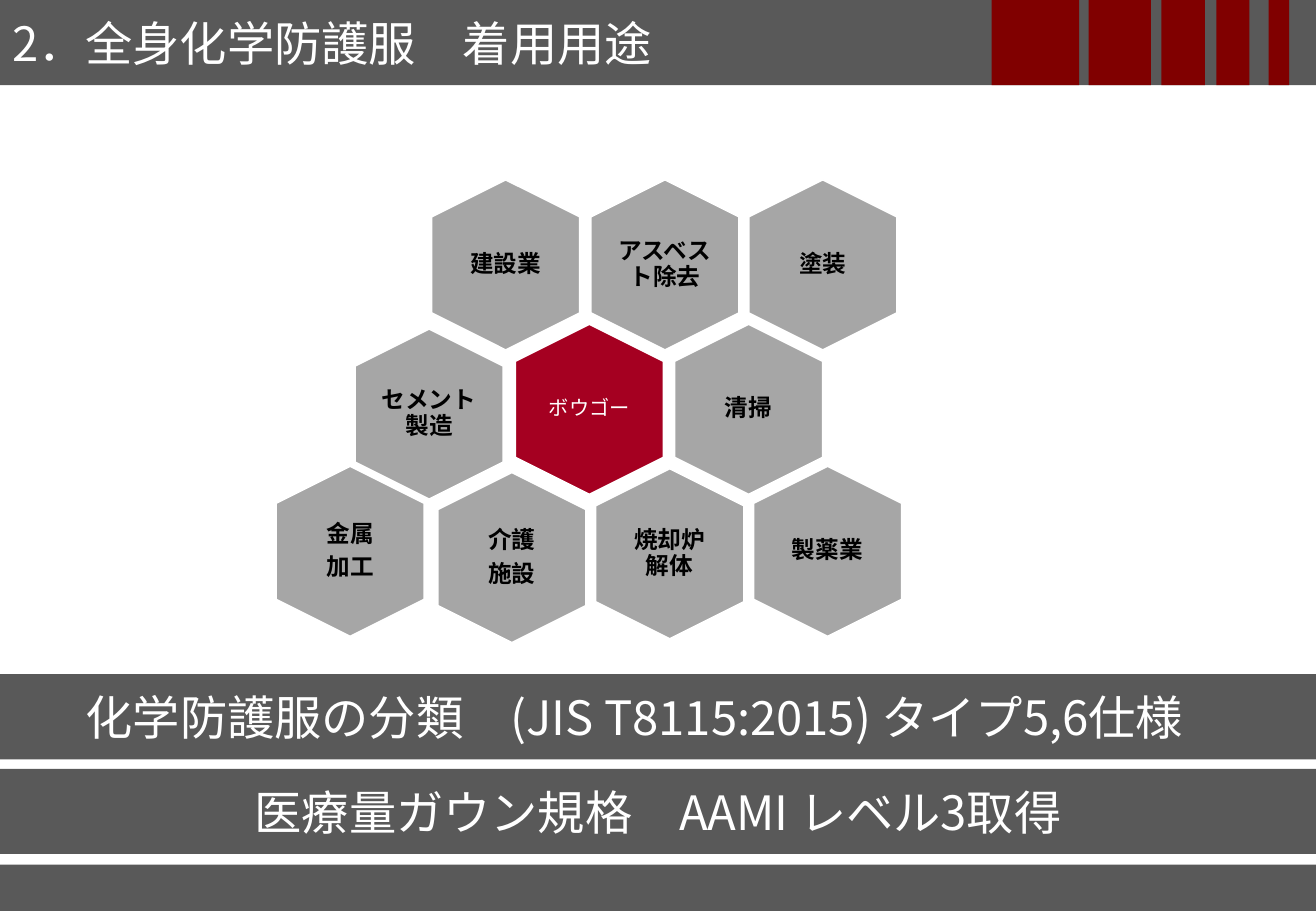
"""Build the slide on the uses of full-body chemical protective clothing."""
from dataclasses import dataclass

from lxml import etree
from pptx import Presentation
from pptx.dml.color import RGBColor
from pptx.enum.shapes import MSO_SHAPE
from pptx.enum.text import MSO_ANCHOR, MSO_AUTO_SIZE, PP_ALIGN
from pptx.oxml.ns import qn
from pptx.util import Cm, Pt

RECTANGLE, HEXAGON = MSO_SHAPE.RECTANGLE, MSO_SHAPE.HEXAGON
LEFT, CENTER = PP_ALIGN.LEFT, PP_ALIGN.CENTER
MIDDLE = MSO_ANCHOR.MIDDLE
NO_AUTOFIT = MSO_AUTO_SIZE.NONE
TITLE_ONLY = 5


@dataclass(frozen=True)
class Theme:
    bar: RGBColor = RGBColor(0x59, 0x59, 0x59)
    stripe: RGBColor = RGBColor(0x80, 0x00, 0x00)
    use: RGBColor = RGBColor(0xA6, 0xA6, 0xA6)
    product: RGBColor = RGBColor(0xA5, 0x00, 0x21)
    light: RGBColor = RGBColor(0xFF, 0xFF, 0xFF)
    dark: RGBColor = RGBColor(0x00, 0x00, 0x00)
    heading_font: str = "Noto Sans CJK JP"
    label_font: str = "Calibri"
    asian_font: str = "Noto Sans CJK JP"
    heading_size: Pt = Pt(28)
    use_size: Pt = Pt(14)
    product_size: Pt = Pt(12)


THEME = Theme()
SLIDE_WIDTH, SLIDE_HEIGHT = 27.51, 19.05
BAR_HEIGHT = 1.78
FOOTER_TOP = 18.08
HEX_LENGTH, HEX_WIDTH = 3.56, 3.10
LABEL_WIDTH, LABEL_HEIGHT = 2.13, 2.44

TITLE = "2．全身化学防護服　着用用途"
STANDARDS = [
    (14.1, "化学防護服の分類　(JIS T8115:2015) タイプ5,6仕様　"),
    (16.08, "医療量ガウン規格　AAMI レベル3取得"),
]
STRIPES = [(20.73, 1.83), (22.76, 1.3), (24.28, 0.91), (25.43, 0.69), (26.52, 0.43)]
PRODUCT = "ボウゴー"
CELLS = [
    (8.79, 3.99, 0, "建設業"),
    (12.12, 3.99, 0, "アスベスト除去"),
    (15.42, 3.99, 0.15, "塗装"),
    (7.19, 7.11, 0, "セメント製造"),
    (10.54, 7.01, 0.13, PRODUCT),
    (13.87, 7.01, 0, "清掃"),
    (5.54, 9.98, 0.15, "金属\n加工"),
    (8.92, 10.11, 0.15, "介護\n施設"),
    (12.22, 10.03, 0.15, "焼却炉\u200b解体".replace("\u200b", "")),
    (15.52, 9.98, 0, "製薬業"),
]


def write(frame, text, font_name, size, color, align=CENTER, bold=False):
    frame.text = text
    frame.word_wrap = True
    frame.auto_size = NO_AUTOFIT
    frame.vertical_anchor = MIDDLE
    for paragraph in frame.paragraphs:
        paragraph.alignment = align
        font = paragraph.font
        font.size, font.bold, font.name = size, bold, font_name
        font.color.rgb = color
        defaults = paragraph._p.xpath("a:pPr/a:defRPr")[0]
        etree.SubElement(defaults, qn("a:ea"), typeface=THEME.asian_font)


def add_filled(shapes, preset, left, top, width, height, fill):
    shape = shapes.add_shape(preset, Cm(left), Cm(top), Cm(width), Cm(height))
    shape.shadow.inherit = False
    shape.fill.solid()
    shape.fill.fore_color.rgb = fill
    shape.line.fill.background()
    return shape


def add_heading(slide):
    title = slide.shapes.title
    title.left, title.top = Cm(0), Cm(0)
    title.width, title.height = Cm(SLIDE_WIDTH), Cm(BAR_HEIGHT)
    title.fill.solid()
    title.fill.fore_color.rgb = THEME.bar
    write(title.text_frame, TITLE, THEME.heading_font, THEME.heading_size,
          THEME.light, LEFT)
    for left, width in STRIPES:
        add_filled(slide.shapes, RECTANGLE, left, 0, width, BAR_HEIGHT, THEME.stripe)


def add_cell(slide, left, top, inset, name):
    is_product = name == PRODUCT
    cell = slide.shapes.add_group_shape()
    hexagon = add_filled(cell.shapes, HEXAGON, left, top, HEX_LENGTH, HEX_WIDTH,
                         THEME.product if is_product else THEME.use)
    hexagon.adjustments[0] = 0.25
    hexagon.rotation = 90
    hexagon.line.color.rgb = THEME.light
    hexagon.line.width = Pt(1)

    label = cell.shapes.add_textbox(
        Cm(left + (HEX_LENGTH - LABEL_WIDTH) / 2),
        Cm(top + (HEX_WIDTH - LABEL_HEIGHT) / 2),
        Cm(LABEL_WIDTH), Cm(LABEL_HEIGHT))
    frame = label.text_frame
    frame.margin_left = frame.margin_right = Cm(inset)
    frame.margin_top = frame.margin_bottom = Cm(inset)
    write(frame, name, THEME.label_font,
          THEME.product_size if is_product else THEME.use_size,
          THEME.light if is_product else THEME.dark, bold=not is_product)
    for paragraph in frame.paragraphs:
        paragraph.line_spacing = 0.9
        paragraph.space_after = Pt(5)


def main():
    deck = Presentation()
    deck.slide_width, deck.slide_height = Cm(SLIDE_WIDTH), Cm(SLIDE_HEIGHT)
    slide = deck.slides.add_slide(deck.slide_layouts[TITLE_ONLY])
    add_heading(slide)
    for cell in CELLS:
        add_cell(slide, *cell)
    for top, standard in STANDARDS:
        bar = add_filled(slide.shapes, RECTANGLE, 0, top, SLIDE_WIDTH, BAR_HEIGHT, THEME.bar)
        write(bar.text_frame, standard, THEME.heading_font, THEME.heading_size, THEME.light)
    add_filled(slide.shapes, RECTANGLE, 0, FOOTER_TOP, SLIDE_WIDTH,
               SLIDE_HEIGHT - FOOTER_TOP, THEME.bar)
    deck.save("out.pptx")


if __name__ == "__main__":
    main()
